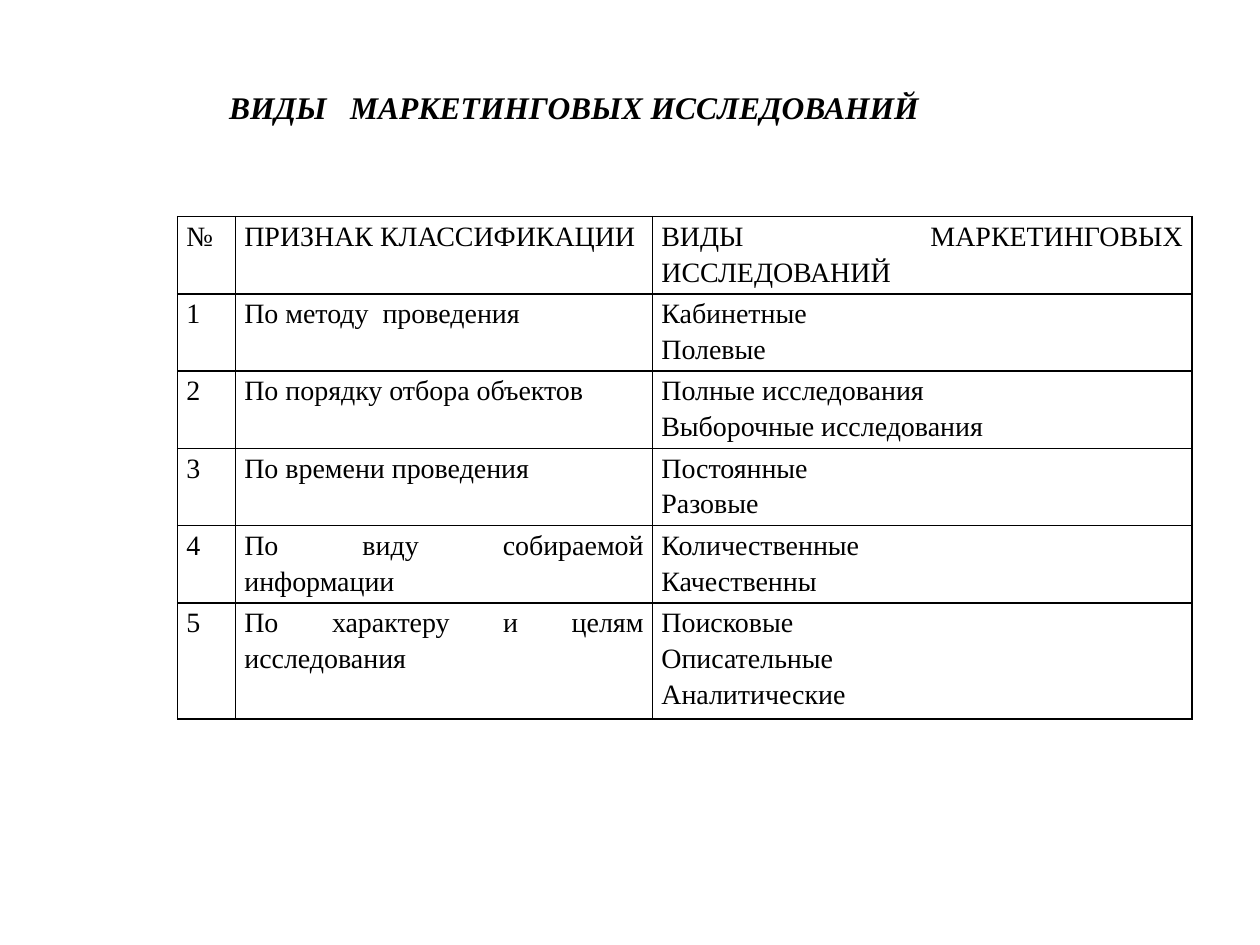
from lxml import etree
from pptx import Presentation
from pptx.dml.color import RGBColor
from pptx.enum.text import MSO_ANCHOR, PP_ALIGN
from pptx.oxml.ns import qn
from pptx.util import Inches, Pt

BLACK = RGBColor(0, 0, 0)
WHITE = RGBColor(255, 255, 255)
JUSTIFY = PP_ALIGN.JUSTIFY
LEFT = PP_ALIGN.LEFT
MIDDLE = MSO_ANCHOR.MIDDLE

TITLE = "ВИДЫ   МАРКЕТИНГОВЫХ ИССЛЕДОВАНИЙ"
ROWS = [
    ("№", "ПРИЗНАК КЛАССИФИКАЦИИ", ["ВИДЫ МАРКЕТИНГОВЫХ ИССЛЕДОВАНИЙ"]),
    ("1", "По методу  проведения", ["Кабинетные", "Полевые"]),
    ("2", "По порядку отбора объектов", ["Полные исследования", "Выборочные исследования"]),
    ("3", "По времени проведения", ["Постоянные", "Разовые"]),
    ("4", "По виду собираемой информации", ["Количественные", "Качественны"]),
    ("5", "По характеру и целям исследования", ["Поисковые", "Описательные", "Аналитические"]),
]
LEFT_ALIGNED = (1, 1)
COL_WIDTHS = [0.46, 3.31, 4.28]
ROW_HEIGHTS = [0.61] * 5 + [0.92]

TITLE_FONT = {"name": "Times New Roman", "size": Pt(18), "bold": True, "italic": True}
CELL_FONT = {"name": "Times New Roman", "size": Pt(16), "bold": False}
CELL_MARGINS = {
    "margin_left": Inches(0.07),
    "margin_right": Inches(0.07),
    "margin_top": 0,
    "margin_bottom": 0,
}


def set_attrs(obj, values):
    for name, value in values.items():
        setattr(obj, name, value)


def write(p, text, font, align):
    p.alignment = align
    r = p.add_run()
    r.text = text
    set_attrs(r.font, font)
    r.font.color.rgb = BLACK


def add_borders(cell):
    tc_pr = cell._tc.get_or_add_tcPr()
    for side in ("lnL", "lnR", "lnT", "lnB"):
        ln = etree.SubElement(tc_pr, qn(f"a:{side}"), w=str(Pt(1)))
        fill = etree.SubElement(ln, qn("a:solidFill"))
        etree.SubElement(fill, qn("a:srgbClr"), val=str(BLACK))


def fill_cell(cell, lines, align):
    set_attrs(cell, CELL_MARGINS)
    add_borders(cell)
    cell.fill.background()
    tf = cell.text_frame
    for i, line in enumerate(lines):
        p = tf.add_paragraph() if i else tf.paragraphs[0]
        p.line_spacing = 1.15
        write(p, line, CELL_FONT, align)


def add_title(s):
    sp = s.shapes.add_textbox(Inches(1.72), Inches(0.65), Inches(6.64), Inches(0.4))
    tf = sp.text_frame
    set_attrs(tf, {"word_wrap": True, "vertical_anchor": MIDDLE})
    write(tf.paragraphs[0], TITLE, TITLE_FONT, JUSTIFY)


def add_research_table(s):
    table = s.shapes.add_table(
        len(ROWS), len(COL_WIDTHS), Inches(1.41), Inches(1.72),
        Inches(sum(COL_WIDTHS)), Inches(sum(ROW_HEIGHTS)),
    ).table
    set_attrs(table, {"first_row": False, "horz_banding": False})
    for col, width in zip(table.columns, COL_WIDTHS):
        col.width = Inches(width)
    for row, height in zip(table.rows, ROW_HEIGHTS):
        row.height = Inches(height)
    for i, (number, feature, kinds) in enumerate(ROWS):
        for j, lines in enumerate(([number], [feature], kinds)):
            align = LEFT if (i, j) == LEFT_ALIGNED else JUSTIFY
            fill_cell(table.cell(i, j), lines, align)


def main():
    prs = Presentation()
    set_attrs(prs, {"slide_width": Inches(10), "slide_height": Inches(7.5)})
    s = prs.slides.add_slide(prs.slide_layouts[6])
    s.background.fill.solid()
    s.background.fill.fore_color.rgb = WHITE
    add_title(s)
    add_research_table(s)
    prs.save("out.pptx")


if __name__ == "__main__":
    main()
